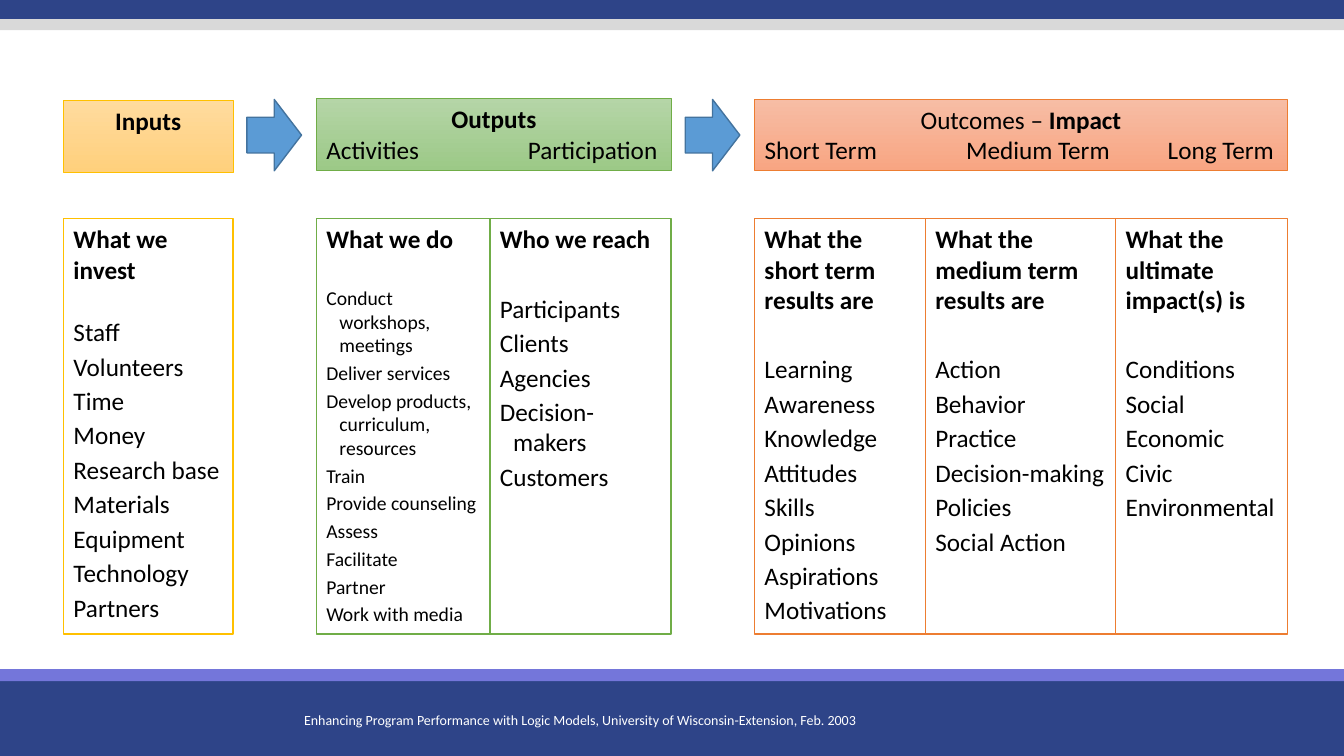
from lxml.etree import SubElement
from pptx import Presentation
from pptx.dml.color import RGBColor as Rgb
from pptx.enum.shapes import MSO_SHAPE as Kind
from pptx.enum.text import MSO_ANCHOR as Anchor, PP_ALIGN as Align
from pptx.oxml.ns import qn
from pptx.util import Pt

HUES = {
    "navy": "2E4488", "violet": "7476DA", "gray": "D9D9D9",
    "white": "FFFFFF", "black": "000000",
    "blue": "5B9BD5", "edge": "43739E",
    "gold": "FFC000", "gold top": "FFDB9E", "gold low": "FFD07C",
    "green": "70AD47", "green top": "B5D5A7", "green low": "9CC987",
    "rust": "ED7D31", "rust top": "F7BDA5", "rust low": "F8A582",
}


def hue(name):
    return Rgb.from_string(HUES[name])


class Board:
    face = "Calibri"
    size = 18
    hang = 9.4
    tab = 144

    def __init__(self, deck):
        self.slide = deck.slides.add_slide(deck.slide_layouts[6])

    def shape(self, kind, box, fill, line=None, weight=1):
        item = self.slide.shapes.add_shape(kind, *map(Pt, box))
        item.shadow.inherit = False
        item.fill.solid()
        item.fill.fore_color.rgb = hue(fill)
        if line:
            item.line.color.rgb = hue(line)
            item.line.width = Pt(weight)
        else:
            item.line.fill.background()
        return item

    def frame(self, item):
        frame = item.text_frame
        frame.word_wrap = True
        frame.vertical_anchor = Anchor.TOP
        return frame

    def style(self, para, size, bold=False, color="black", align=Align.LEFT):
        para.alignment = align
        font = para.font
        font.name, font.size, font.bold = self.face, Pt(size), bold
        font.color.rgb = hue(color)

    def head(self, box, color, title, terms):
        item = self.shape(Kind.RECTANGLE, box, color, color, 0.5)
        item.fill.gradient()
        item.fill.gradient_angle = 270
        for stop, end in zip(item.fill.gradient_stops, ("top", "low")):
            stop.color.rgb = hue(f"{color} {end}")
        frame = self.frame(item)
        para = frame.paragraphs[0]
        plain, strong = title
        if plain:
            para.add_run().text = plain
            run = para.add_run()
            run.text = strong
            run.font.bold = True
        else:
            para.text = strong
        self.style(para, self.size, not plain, align=Align.CENTER)
        if terms:
            para = frame.add_paragraph()
            para.text = "\t".join(terms)
            tabs = SubElement(para._p.get_or_add_pPr(), qn("a:tabLst"))
            for i in range(1, len(terms)):
                SubElement(tabs, qn("a:tab"), pos=str(Pt(self.tab * i)), algn="l")
            self.style(para, self.size)

    def column(self, box, color, title, gap, size, items):
        frame = self.frame(self.shape(Kind.RECTANGLE, box, "white", color))
        para = frame.paragraphs[0]
        para.text = title
        para.space_after = Pt(gap)
        self.style(para, self.size, True)
        for text in items:
            para = frame.add_paragraph()
            para.text = text
            para.space_after = Pt(3)
            props = para._p.get_or_add_pPr()
            props.set("marL", str(Pt(self.hang)))
            props.set("indent", str(-Pt(self.hang)))
            self.style(para, size)

    def note(self, box, text):
        frame = self.frame(self.slide.shapes.add_textbox(*map(Pt, box)))
        frame.text = text
        self.style(frame.paragraphs[0], 10, color="white", align=Align.CENTER)


# Each group: left, top, color, title (plain, bold), terms, columns
# Each column: width, title, gap below title, item size, items
GROUPS = [
    (45.4, 72, "gold", ("", "Inputs"), (), [
        (121, "What we invest", 23, 18, (
            "Staff", "Volunteers", "Time", "Money", "Research base",
            "Materials", "Equipment", "Technology", "Partners")),
    ]),
    (226, 70.5, "green", ("", "Outputs"), ("Activities", "Participation"), [
        (124, "What we do", 23, 14, (
            "Conduct workshops, meetings", "Deliver services",
            "Develop products, curriculum, resources", "Train",
            "Provide counseling", "Assess", "Facilitate", "Partner",
            "Work with media")),
        (129.5, "Who we reach", 28, 18, (
            "Participants", "Clients", "Agencies", "Decision- makers",
            "Customers")),
    ]),
    (539, 71, "rust", ("Outcomes – ", "Impact"),
     ("Short Term", "Medium Term", "Long Term"), [
        (122, "What the short term results are", 28, 18, (
            "Learning", "Awareness", "Knowledge", "Attitudes", "Skills",
            "Opinions", "Aspirations", "Motivations")),
        (136, "What the medium term results are", 28, 18, (
            "Action", "Behavior", "Practice", "Decision-making", "Policies",
            "Social Action")),
        (122.5, "What the ultimate impact(s) is", 28, 18, (
            "Conditions", "Social", "Economic", "Civic", "Environmental")),
    ]),
]


def main():
    deck = Presentation()
    deck.slide_width, deck.slide_height = Pt(960), Pt(540)
    board = Board(deck)

    # Bands and footer
    for top, high, color in ((482.4, 57.6, "navy"), (478, 8.6, "violet"),
                             (0, 13.7, "navy"), (13.7, 7.9, "gray")):
        board.shape(Kind.RECTANGLE, (0, top, 960, high), color)
    board.note((164, 504.7, 500.4, 19.4),
               "Enhancing Program Performance with Logic Models, "
               "University of Wisconsin-Extension, Feb. 2003")

    # Groups, with an arrow after each but the last
    for left, top, color, title, terms, columns in GROUPS:
        wide = sum(column[0] for column in columns)
        board.head((left, top, wide, 51), color, title, terms)
        x = left
        for width, *rest in columns:
            board.column((x, 156.3, width, 296.5), color, *rest)
            x += width
        if color != "rust":
            board.shape(Kind.RIGHT_ARROW, (x + 10, 71, 39, 51), "blue", "edge")

    deck.save("out.pptx")


if __name__ == "__main__":
    main()
